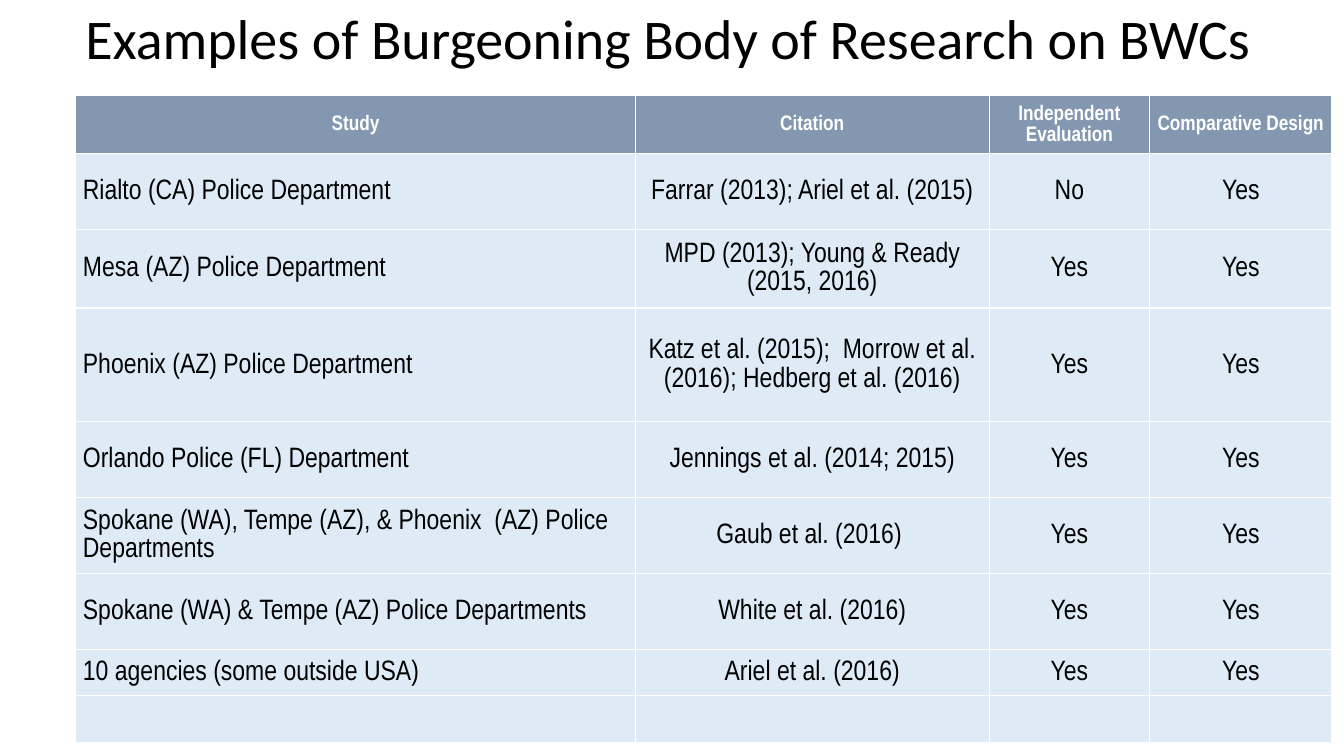
import pptx
import pptx.util
import pptx.dml.color
import pptx.enum.text

Cm = pptx.util.Cm
ALIGN = pptx.enum.text.PP_ALIGN
MIDDLE = pptx.enum.text.MSO_ANCHOR.MIDDLE

BLACK = pptx.dml.color.RGBColor(0x00, 0x00, 0x00)
WHITE = pptx.dml.color.RGBColor(0xFF, 0xFF, 0xFF)
HEADER_BLUE = pptx.dml.color.RGBColor(0x84, 0x97, 0xB0)
BODY_BLUE = pptx.dml.color.RGBColor(0xDE, 0xEB, 0xF7)

COLUMN_WIDTHS = [14.1, 8.92, 4.04, 4.6]
ROW_HEIGHTS = [1.47, 1.91, 1.98, 2.87, 1.91, 1.91, 1.91, 1.17, 1.17]
STUDIES = [
    ("Study", "Citation", "Independent Evaluation", "Comparative Design"),
    ("Rialto (CA) Police Department", "Farrar (2013); Ariel et al. (2015)", "No", "Yes"),
    ("Mesa (AZ) Police Department", "MPD (2013); Young & Ready (2015, 2016)", "Yes", "Yes"),
    ("Phoenix (AZ) Police Department",
     "Katz et al. (2015);  Morrow et al. (2016); Hedberg et al. (2016)", "Yes", "Yes"),
    ("Orlando Police (FL) Department", "Jennings et al. (2014; 2015)", "Yes", "Yes"),
    ("Spokane (WA), Tempe (AZ), & Phoenix  (AZ) Police Departments",
     "Gaub et al. (2016) ", "Yes", "Yes"),
    ("Spokane (WA) & Tempe (AZ) Police Departments", "White et al. (2016)", "Yes", "Yes"),
    ("10 agencies (some outside USA)", "Ariel et al. (2016)", "Yes", "Yes"),
    ("", "", "", ""),
]


def write_text(frame, text, font, size, color, bold=False, align=ALIGN.LEFT, spacing=1.07):
    paragraph = frame.paragraphs[0]
    paragraph.alignment = align
    paragraph.line_spacing = spacing
    run = paragraph.add_run()
    run.text = text
    run.font.name = font
    run.font.size = pptx.util.Pt(size)
    run.font.bold = bold
    run.font.color.rgb = color


presentation = pptx.Presentation()
presentation.slide_width = Cm(33.87)
presentation.slide_height = Cm(19.05)
slide = presentation.slides.add_slide(presentation.slide_layouts[6])

title = slide.shapes.add_textbox(Cm(1.9), Cm(0), Cm(30), Cm(2.1))
title.text_frame.word_wrap = True
title.text_frame.vertical_anchor = MIDDLE
write_text(title.text_frame, "Examples of Burgeoning Body of Research on BWCs",
           font="Calibri", size=40, color=BLACK, spacing=0.9)

table = slide.shapes.add_table(
    len(ROW_HEIGHTS), len(COLUMN_WIDTHS), Cm(1.91), Cm(2.4),
    Cm(sum(COLUMN_WIDTHS)), Cm(sum(ROW_HEIGHTS))).table
table.horz_banding = False
for column, width in zip(table.columns, COLUMN_WIDTHS):
    column.width = Cm(width)
for row, height in zip(table.rows, ROW_HEIGHTS):
    row.height = Cm(height)

for row_index, study in enumerate(STUDIES):
    is_header = row_index == 0
    for column_index, text in enumerate(study):
        cell = table.cell(row_index, column_index)
        cell.fill.solid()
        cell.fill.fore_color.rgb = HEADER_BLUE if is_header else BODY_BLUE
        cell.vertical_anchor = MIDDLE
        cell.margin_left = cell.margin_right = Cm(0.18)
        cell.margin_top = cell.margin_bottom = Cm(0)
        if text:
            write_text(cell.text_frame, text, font="Arial Narrow",
                       size=15 if is_header else 20,
                       color=WHITE if is_header else BLACK, bold=is_header,
                       align=ALIGN.CENTER if is_header or column_index else ALIGN.LEFT)

presentation.save("out.pptx")
